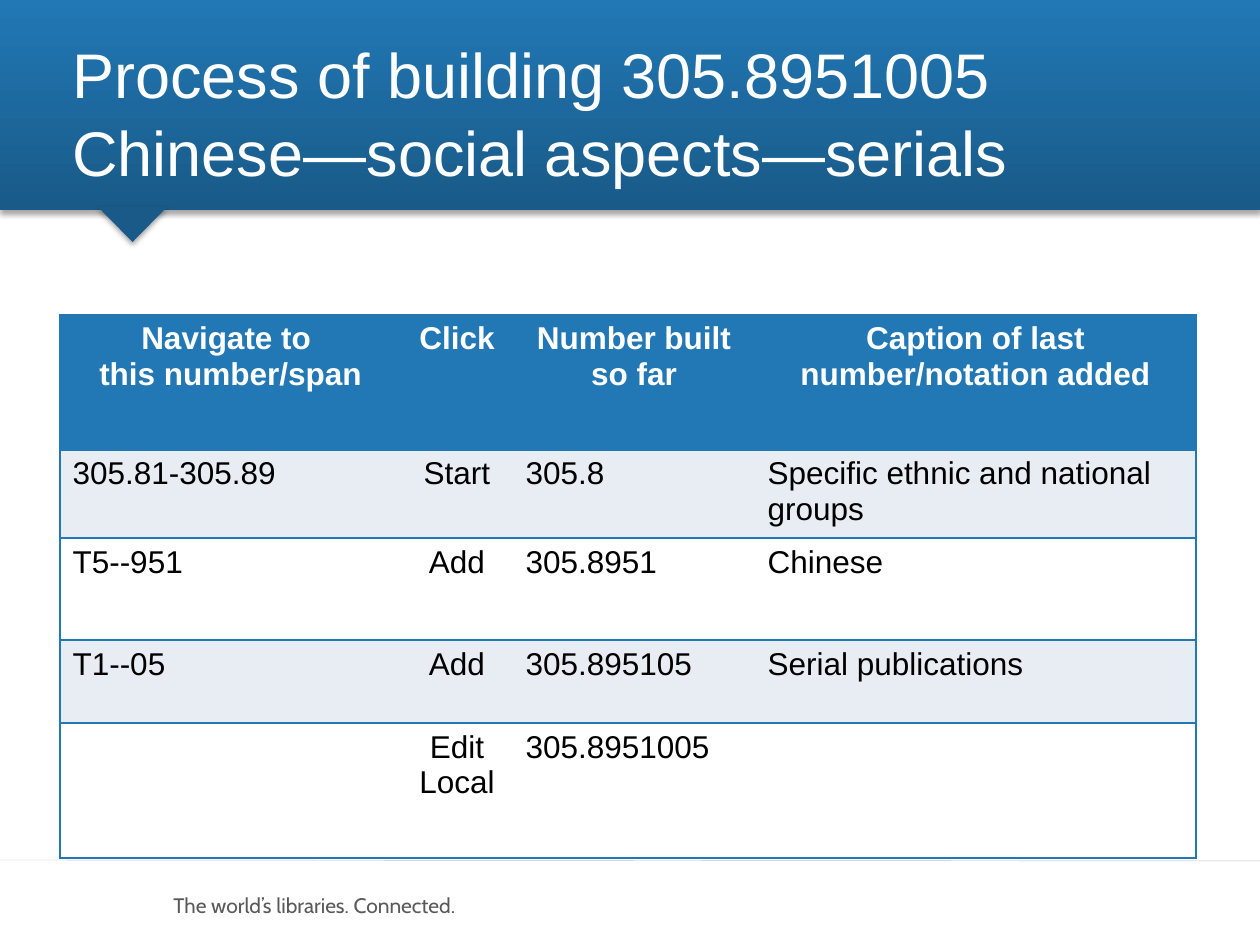
from lxml.etree import SubElement
from pptx import Presentation
from pptx.dml.color import RGBColor
from pptx.enum.shapes import MSO_CONNECTOR as Connector, MSO_SHAPE as Shape
from pptx.enum.text import MSO_ANCHOR as Anchor, PP_ALIGN as Align
from pptx.oxml.ns import qn
from pptx.util import Pt

EMU_PER_PX = 914400 / 126
BLUE, DARK_BLUE, PALE, WHITE, BLACK = "2178B5", "195A88", "E8ECF3", "FFFFFF", "000000"
COLUMN_WIDTHS = [341, 112, 242, 441]
ROW_HEIGHTS = [135, 83, 102, 83, 135]
STEPS = [
    ["Navigate to \nthis number/span", "Click", "Number built so far",
     "Caption of last number/notation added"],
    ["305.81-305.89", "Start", "305.8", "Specific ethnic and national groups"],
    ["T5--951", "Add", "305.8951", "Chinese"],
    ["T1--05", "Add", "305.895105", "Serial publications"],
    ["", "Edit Local", "305.8951005", ""],
]


def px(*lengths):
    return [round(length * EMU_PER_PX) for length in lengths]


def color(value):
    return RGBColor.from_string(value)


def style(paragraph, size, shade, face="Arial", bold=False):
    font = paragraph.font
    font.size, font.name, font.bold = Pt(size), face, bold
    font.color.rgb = color(shade)


def add_text(slide, box, text, size, shade, face, spacing=1.0):
    frame = slide.shapes.add_textbox(*px(*box)).text_frame
    frame.word_wrap = True
    frame.margin_right = 0
    frame.vertical_anchor = Anchor.MIDDLE
    frame.text = text
    frame.paragraphs[0].line_spacing = spacing
    style(frame.paragraphs[0], size, shade, face)


def add_header_shape(slide, kind, box):
    shape = slide.shapes.add_shape(kind, *px(*box))
    shape.line.fill.background()
    shape.shadow.inherit = False
    effects = shape._element.spPr.find(qn("a:effectLst"))
    shadow = SubElement(effects, qn("a:outerShdw"), blurRad=str(Pt(3.1)),
                        dist=str(Pt(1.8)), dir="5400000", rotWithShape="0")
    shade = SubElement(shadow, qn("a:srgbClr"), val=BLACK)
    SubElement(shade, qn("a:alpha"), val="35000")
    return shape


def add_header(slide):
    band = add_header_shape(slide, Shape.RECTANGLE, (0, 0, 1260, 210))
    band.fill.gradient()
    band.fill.gradient_angle = 90
    for stop, shade in zip(band.fill.gradient_stops, (DARK_BLUE, BLUE)):
        stop.color.rgb = color(shade)
    pointer = add_header_shape(slide, Shape.ISOSCELES_TRIANGLE, (98, 207, 69, 35))
    pointer.rotation = 180
    pointer.fill.solid()
    pointer.fill.fore_color.rgb = color(DARK_BLUE)


def add_footer_rule(slide):
    rule = slide.shapes.add_connector(Connector.STRAIGHT, *px(0, 860, 1260, 861))
    rule.line.color.rgb = color("BFBFBF")
    rule.line.width = Pt(0.25)
    SubElement(rule._element.spPr, qn("a:effectLst"))


def set_borders(cell, visible):
    properties = cell._tc.get_or_add_tcPr()
    for side in "LRTB":
        edge = SubElement(properties, qn(f"a:ln{side}"), w=str(Pt(1)))
        if side in visible:
            fill = SubElement(edge, qn("a:solidFill"))
            SubElement(fill, qn("a:srgbClr"), val=BLUE)
        else:
            SubElement(edge, qn("a:noFill"))


def add_steps(slide):
    size = px(sum(COLUMN_WIDTHS), sum(ROW_HEIGHTS))
    table = slide.shapes.add_table(len(STEPS), len(COLUMN_WIDTHS), *px(60, 315), *size).table
    table.first_row = table.horz_banding = False
    for column, width in zip(table.columns, px(*COLUMN_WIDTHS)):
        column.width = width
    for row, height in zip(table.rows, px(*ROW_HEIGHTS)):
        row.height = height
    outer_sides = {0: "L", len(COLUMN_WIDTHS) - 1: "R"}
    for r, step in enumerate(STEPS):
        heading = r == 0
        background = BLUE if heading else PALE if r % 2 else WHITE
        for c, text in enumerate(step):
            cell = table.cell(r, c)
            set_borders(cell, "TB" + outer_sides.get(c, ""))
            cell.fill.solid()
            cell.fill.fore_color.rgb = color(background)
            cell.text = text
            for paragraph in cell.text_frame.paragraphs:
                paragraph.alignment = Align.CENTER if heading or c == 1 else Align.LEFT
                style(paragraph, 18, WHITE if heading else BLACK, bold=heading)


def main():
    deck = Presentation()
    deck.slide_width, deck.slide_height = px(1260, 945)
    slide = deck.slides.add_slide(deck.slide_layouts[6])
    add_text(slide, (161, 886, 354, 38), "The world’s libraries. Connected.",
             12, "595959", "Cabin")
    add_footer_rule(slide)
    add_header(slide)
    add_text(slide, (60, 23, 963, 176),
             "Process of building 305.8951005\vChinese—social aspects—serials",
             36, WHITE, "Arial", 1.04)
    add_steps(slide)
    deck.save("out.pptx")


if __name__ == "__main__":
    main()
